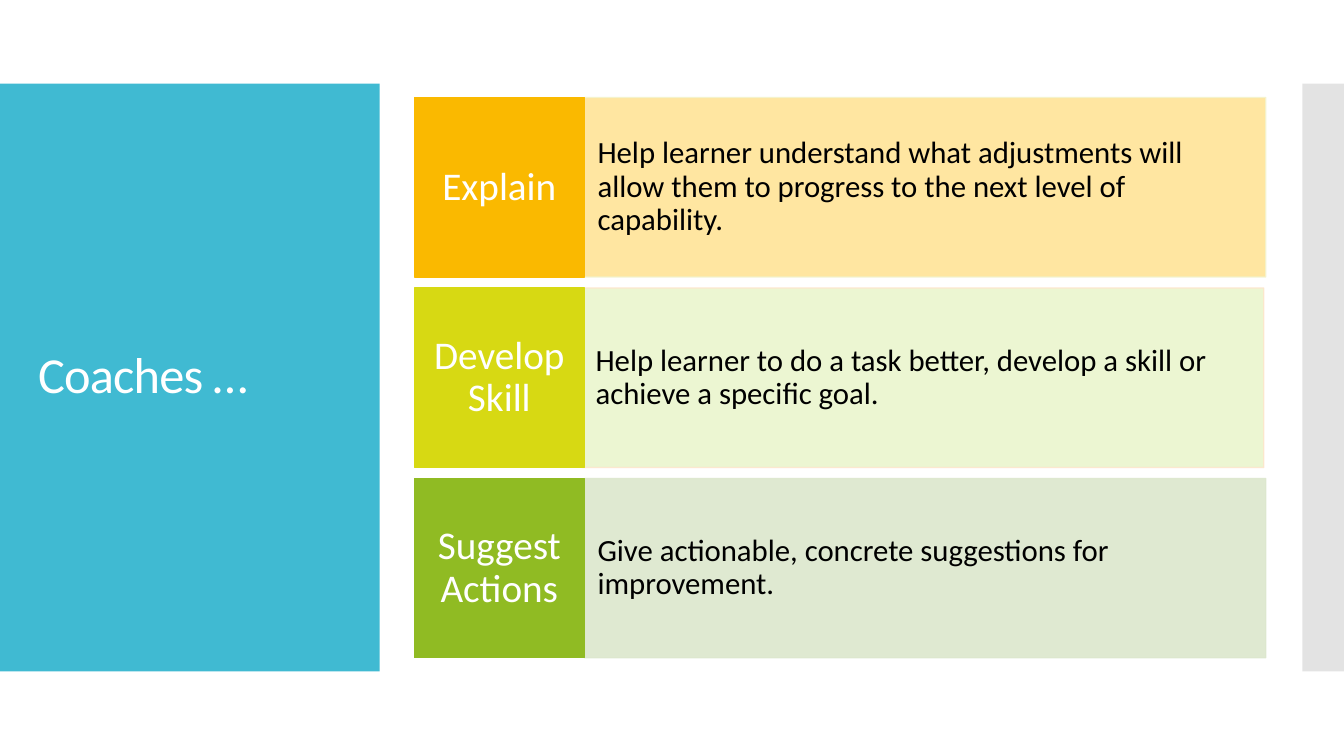
from lxml import etree
from pptx import Presentation
from pptx.dml.color import RGBColor
from pptx.enum.shapes import MSO_SHAPE
from pptx.enum.text import MSO_ANCHOR, MSO_AUTO_SIZE, PP_ALIGN
from pptx.oxml.ns import qn
from pptx.util import Cm, Pt

RECT = MSO_SHAPE.RECTANGLE
MIDDLE = MSO_ANCHOR.MIDDLE
NO_FIT = MSO_AUTO_SIZE.NONE
LEFT, CENTER = PP_ALIGN.LEFT, PP_ALIGN.CENTER

COLORS = {
    "panel": "40BAD2", "edge": "C8C8C8", "white": "FFFFFF", "black": "000000",
    "amber": "FAB900", "amber_tint": "FFE497", "amber_rim": "F4F3CB",
    "lime": "D7D913", "lime_tint": "EBF6CE", "lime_rim": "FDE6CC",
    "green": "90BB23", "green_tint": "DCE7CD",
}

# Label, explanation, label colour, tint, tint outline, nudge of the tint in cm
ROWS = [
    ("Explain",
     "Help learner understand what adjustments will allow them to progress "
     "to the next level of capability.",
     "amber", "amber_tint", "amber_rim", 0),
    ("Develop Skill",
     "Help learner to do a task better, develop a skill or achieve a specific goal.",
     "lime", "lime_tint", "lime_rim", -0.05),
    ("Suggest Actions",
     "Give actionable, concrete suggestions for improvement.",
     "green", "green_tint", "green_tint", 0),
]


class SlideBuilder:
    font = "Calibri"
    line_spacing = 0.9

    def __init__(self, slide):
        self.slide = slide

    def paint(self, fill, color, opacity):
        fill.solid()
        fill.fore_color.rgb = RGBColor.from_string(COLORS[color])
        if opacity < 100:
            rgb = fill._xPr.find(qn("a:solidFill")).find(qn("a:srgbClr"))
            etree.SubElement(rgb, qn("a:alpha"), val=str(opacity * 1000))

    def block(self, box, color, outline=None, opacity=100):
        shape = self.slide.shapes.add_shape(RECT, *(Cm(v) for v in box))
        shape.shadow.inherit = False
        self.paint(shape.fill, color, opacity)
        if outline:
            shape.line.width = Pt(0.85)
            self.paint(shape.line.fill, outline, opacity)
        else:
            shape.line.fill.background()
        return shape

    def add_text(self, shape, text, size, color, align=LEFT, inset=(0.25, 0.13)):
        frame = shape.text_frame
        frame.word_wrap = True
        frame.auto_size = NO_FIT
        frame.vertical_anchor = MIDDLE
        frame.margin_left = frame.margin_right = Cm(inset[0])
        frame.margin_top = frame.margin_bottom = Cm(inset[1])
        paragraph = frame.paragraphs[0]
        paragraph.alignment = align
        paragraph.line_spacing = self.line_spacing
        run = paragraph.add_run()
        run.text = text
        run.font.name = self.font
        run.font.size = Pt(size)
        run.font.color.rgb = RGBColor.from_string(COLORS[color])
        return run

    def title(self, box, text):
        heading = self.slide.shapes.title
        heading.left, heading.top, heading.width, heading.height = (Cm(v) for v in box)
        run = self.add_text(heading, text, 36, "white")
        run.font._element.set("spc", "-60")
        # Bring the title in front of the panels
        self.slide.shapes._spTree.append(heading._element)


def main():
    prs = Presentation()
    prs.slide_width, prs.slide_height = Cm(33.87), Cm(19.05)
    builder = SlideBuilder(prs.slides.add_slide(prs.slide_layouts[5]))

    # Side panels and title
    builder.block((0, 2.11, 9.57, 14.81), "panel")
    builder.block((32.82, 2.11, 1.05, 14.81), "edge", opacity=50)
    builder.title((0.71, 3.12, 8.18, 12.78), "Coaches …")

    # Rows: a tinted explanation beside a coloured label
    left, top, pitch, height = 10.44, 2.46, 4.8, 4.52
    label_width, tint_width = 4.29, 17.17
    for i, (label, explanation, color, tint, rim, nudge) in enumerate(ROWS):
        y = top + i * pitch
        tint_box = (left + label_width + nudge, y, tint_width, height)
        tint_block = builder.block(tint_box, tint, rim, opacity=90)
        builder.add_text(tint_block, explanation, 22, "black", inset=(0.33, 1.14))
        label_block = builder.block((left, y, label_width, height), color, color)
        builder.add_text(label_block, label, 28, "white", CENTER, inset=(0.23, 0.46))

    prs.save("out.pptx")


if __name__ == "__main__":
    main()
